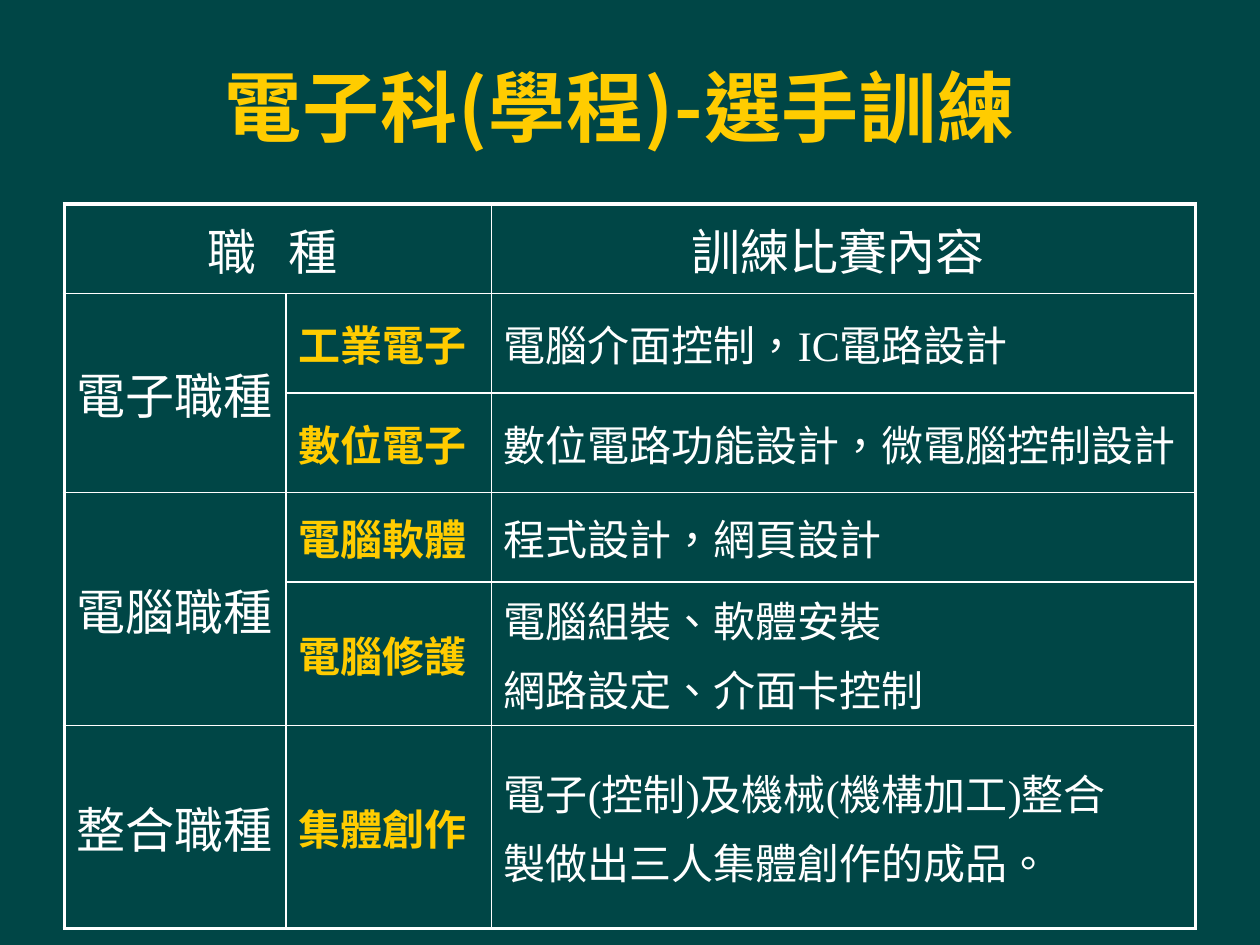
from lxml.etree import SubElement
from pptx import Presentation
from pptx.dml.color import RGBColor
from pptx.enum.lang import MSO_LANGUAGE_ID as Lang
from pptx.enum.text import MSO_ANCHOR as Anchor, PP_ALIGN as Align
from pptx.oxml.ns import qn
from pptx.util import Inches, Pt

BACKGROUND, GOLD, WHITE = "004646", "FFCC00", "FFFFFF"
SERIF, SANS = "Times New Roman", "Noto Sans CJK SC"
THIN, THICK = 1, 2.25

COL_WIDTHS = [1.76, 1.63, 5.59]
ROW_HEIGHTS = [0.71, 0.79, 0.79, 0.71, 1.14, 1.61]
TRAINING = [
    ("電子職種", [
        ("工業電子", ["電腦介面控制，IC電路設計"]),
        ("數位電子", ["數位電路功能設計，微電腦控制設計"]),
    ]),
    ("電腦職種", [
        ("電腦軟體", ["程式設計，網頁設計"]),
        ("電腦修護", ["電腦組裝、軟體安裝", "網路設定、介面卡控制"]),
    ]),
    ("整合職種", [
        ("集體創作", ["電子(控制)及機械(機構加工)整合",
                  "製做出三人集體創作的成品。"]),
    ]),
]


def rgb(color):
    return RGBColor.from_string(color)


def add_run(p, text, size, color, font=SERIF, bold=False, spacing=0):
    """Add a run; spacing is the extra width of each character in points."""
    r = p.add_run()
    r.text = text
    r.font.size, r.font.bold, r.font.name = Pt(size), bold, font
    r.font.color.rgb = rgb(color)
    r.font.language_id = Lang.TRADITIONAL_CHINESE
    if spacing:
        r.font._element.set("spc", str(int(spacing * 100)))
    return r


def add_title(slide, left, top, width, height):
    tf = slide.shapes.add_textbox(*map(Inches, (left, top, width, height))).text_frame
    tf.word_wrap = True
    tf.vertical_anchor = Anchor.MIDDLE
    p = tf.paragraphs[0]
    p.alignment = Align.CENTER
    r = add_run(p, "電子科(學程)-選手訓練", 44, GOLD, SANS, True, 0.5)
    SubElement(r.font._element, qn("a:ea"), typeface=SANS)


def set_borders(cell, widths):
    """Draw left, right, top and bottom borders of the given widths."""
    tc_pr = cell._tc.get_or_add_tcPr()
    for position, (side, width) in enumerate(zip("LRTB", widths)):
        ln = SubElement(tc_pr, qn(f"a:ln{side}"), w=str(Pt(width)))
        fill = SubElement(ln, qn("a:solidFill"))
        SubElement(fill, qn("a:srgbClr"), val=WHITE)
        tc_pr.insert(position, ln)


def fill_cell(cell, lines, size, color=WHITE, bold=False, align=Align.LEFT):
    """Write one paragraph per line; each line is a list of (text, spacing)."""
    tf = cell.text_frame
    for i, line in enumerate(lines):
        p = tf.add_paragraph() if i else tf.paragraphs[0]
        p.alignment = align
        p.space_before = Pt(size * 0.2)
        for text, spacing in line:
            add_run(p, text, size, color, bold=bold, spacing=spacing)


def add_training_table(slide, left, top):
    n_rows, n_cols = len(ROW_HEIGHTS), len(COL_WIDTHS)
    box = (left, top, sum(COL_WIDTHS), sum(ROW_HEIGHTS))
    table = slide.shapes.add_table(n_rows, n_cols, *map(Inches, box)).table
    table.first_row = table.horz_banding = False
    for column, width in zip(table.columns, COL_WIDTHS):
        column.width = Inches(width)
    for row, height in zip(table.rows, ROW_HEIGHTS):
        row.height = Inches(height)

    for i in range(n_rows):
        for j in range(n_cols):
            cell = table.cell(i, j)
            cell.fill.background()
            cell.vertical_anchor = Anchor.MIDDLE
            outer = (j == 0, j == n_cols - 1, i == 0, i == n_rows - 1)
            set_borders(cell, [THICK if edge else THIN for edge in outer])

    table.cell(0, 0).merge(table.cell(0, 1))
    fill_cell(table.cell(0, 0), [[("職 ", 6), ("種 ", 0)]], 28, align=Align.CENTER)
    fill_cell(table.cell(0, 2), [[("訓練比賽內容 ", 0)]], 28, align=Align.CENTER)

    i = 1
    for category, trades in TRAINING:
        if len(trades) > 1:
            table.cell(i, 0).merge(table.cell(i + len(trades) - 1, 0))
        fill_cell(table.cell(i, 0), [[(category, 0)]], 28)
        for trade, contents in trades:
            fill_cell(table.cell(i, 1), [[(trade, 0)]], 24, GOLD, True)
            fill_cell(table.cell(i, 2), [[(text, 0)] for text in contents], 24)
            i += 1


def main():
    prs = Presentation()
    prs.slide_width, prs.slide_height = Inches(10), Inches(7.5)
    slide = prs.slides.add_slide(prs.slide_layouts[6])
    slide.background.fill.solid()
    slide.background.fill.fore_color.rgb = rgb(BACKGROUND)
    add_title(slide, 0.51, 0.21, 8.82, 1.25)
    add_training_table(slide, 0.51, 1.62)
    prs.save("out.pptx")


if __name__ == "__main__":
    main()
